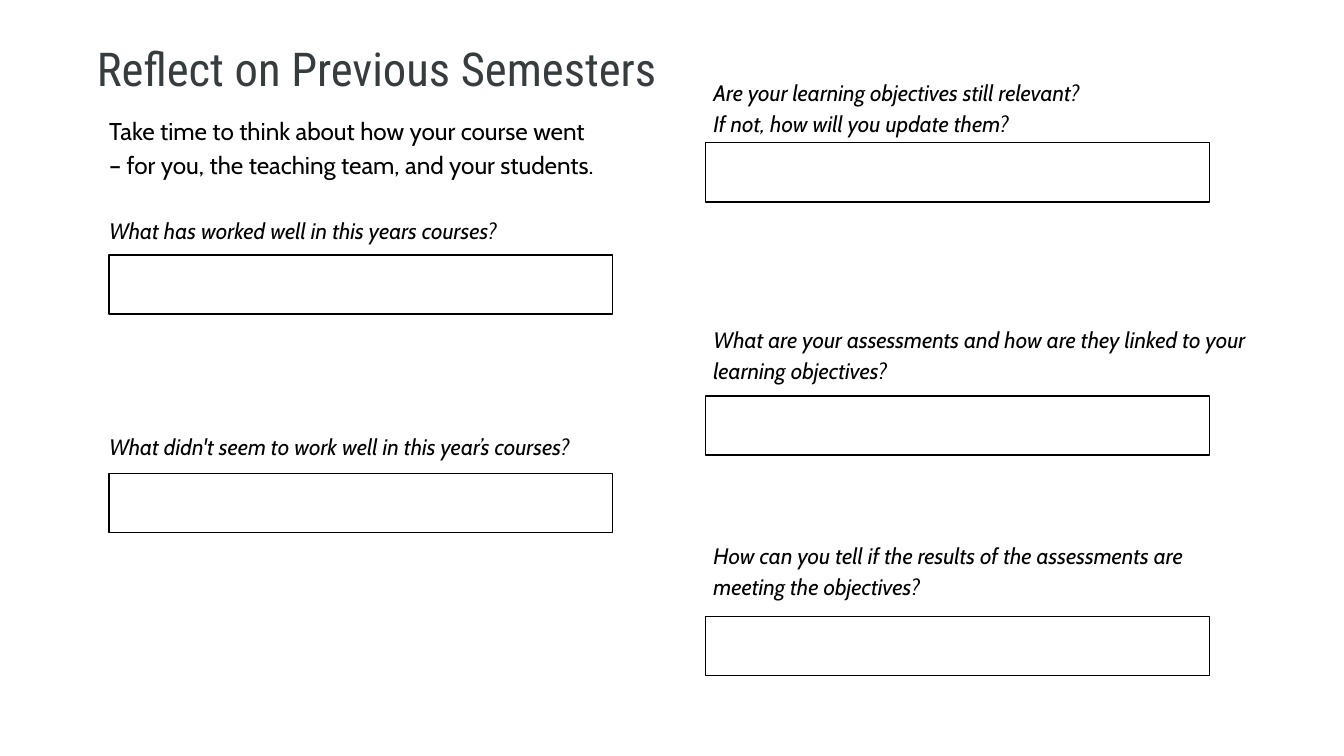
import pptx
import pptx.dml.color
import pptx.enum.shapes
import pptx.enum.text
import pptx.util

Pt = pptx.util.Pt
ANSWER_WIDTH, ANSWER_HEIGHT = 270, 31.7
LEFT_ANSWERS, RIGHT_ANSWERS = 58.3, 378


def colour(value):
    return pptx.dml.color.RGBColor.from_string(value)


def add_text_box(page, left, top, width, height, inset, top_inset=None):
    box = page.shapes.add_textbox(Pt(left), Pt(top), Pt(width), Pt(height))
    frame = box.text_frame
    frame.word_wrap = True
    frame.vertical_anchor = pptx.enum.text.MSO_ANCHOR.TOP
    frame.margin_left = frame.margin_right = frame.margin_bottom = Pt(inset)
    frame.margin_top = Pt(top_inset or inset)
    return frame


def add_text(frame, text, size=12, font="Cabin", fill="000000", italic=False,
             line_spacing=1.15, before=0):
    first = frame.paragraphs[0]
    para = frame.add_paragraph() if first.runs else first
    para.line_spacing = line_spacing
    para.space_before = Pt(before)
    span = para.add_run()
    span.text = text
    span.font.size = Pt(size)
    span.font.name = font
    span.font.italic = italic
    span.font.color.rgb = colour(fill)


def add_answer_box(page, left, top):
    box = page.shapes.add_shape(
        pptx.enum.shapes.MSO_SHAPE.RECTANGLE,
        Pt(left), Pt(top), Pt(ANSWER_WIDTH), Pt(ANSWER_HEIGHT))
    box.shadow.inherit = False
    box.fill.background()
    box.line.color.rgb = colour("000000")
    box.line.width = Pt(0.75)


def main():
    deck = pptx.Presentation()
    deck.slide_width, deck.slide_height = Pt(720), Pt(405)
    page = deck.slides.add_slide(deck.slide_layouts[6])

    title = add_text_box(page, 42.5, 12.2, 381.6, 57.6, 9.4)
    add_text(title, "Reflect on Previous Semesters", size=25,
             font="Roboto Condensed", fill="373C3F", line_spacing=1)

    left_column = add_text_box(page, 49, 33.1, 304.6, 342, 9.4, top_inset=27)
    add_text(left_column, "Take time to think about how your course went", size=13)
    add_text(left_column, "– for you, the teaching team, and your students.", size=13)
    add_text(left_column, "What has worked well in this years courses?",
             italic=True, before=17.9)
    add_text(left_column, "What didn't seem to work well in this year’s courses?",
             italic=True, before=99.2)

    right_column = add_text_box(page, 375.1, 33.1, 304.6, 296.6, 7.2)
    for question, before in (
        ("Are your learning objectives still relevant?", 0),
        ("If not, how will you update them?", 0),
        ("What are your assessments and how are they linked to your "
         "learning objectives?", 99.2),
        ("How can you tell if the results of the assessments are "
         "meeting the objectives?", 82.7),
    ):
        add_text(right_column, question, italic=True, before=before)

    for left, tops in ((LEFT_ANSWERS, (136.6, 253.6)),
                       (RIGHT_ANSWERS, (76.5, 212.2, 330.3))):
        for top in tops:
            add_answer_box(page, left, top)

    deck.save("out.pptx")


if __name__ == "__main__":
    main()
